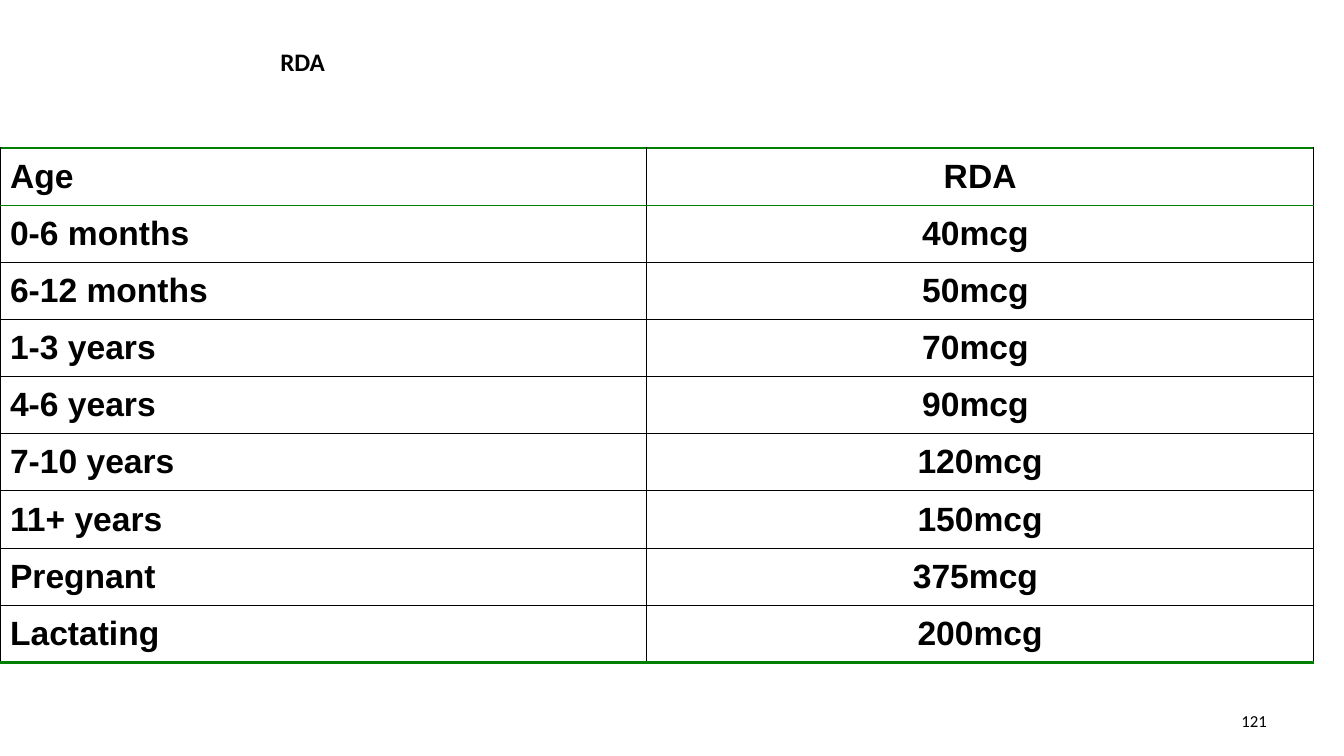
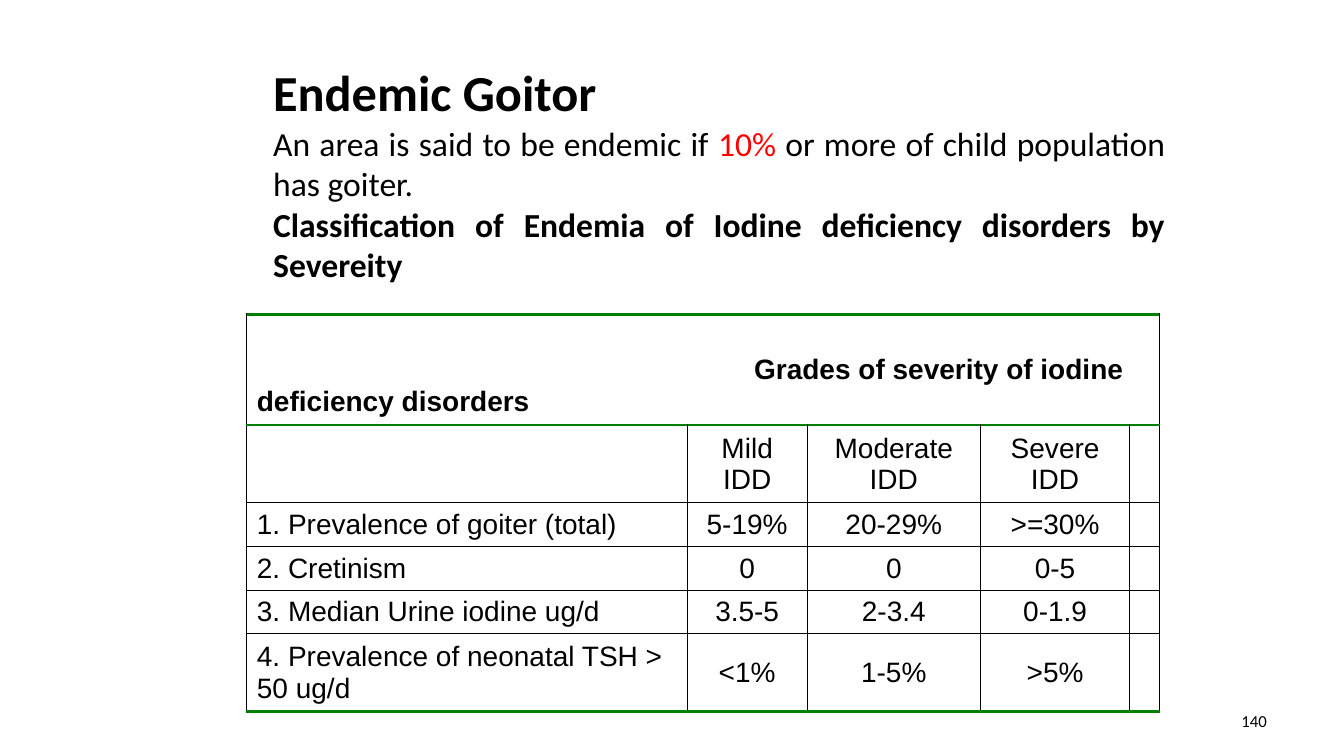
from dataclasses import dataclass

from lxml import etree
from pptx import Presentation
from pptx import util as u
from pptx.dml.color import RGBColor
from pptx.enum import text as t
from pptx.oxml import ns

BLACK, GREEN, RED = "000000", "008000", "FF0000"
HEADING_FONT, TABLE_FONT = "Calibri", "Arial"
LEFT, CENTER, RIGHT, JUSTIFY = (
    t.PP_ALIGN.LEFT, t.PP_ALIGN.CENTER, t.PP_ALIGN.RIGHT, t.PP_ALIGN.JUSTIFY)
TOP, MIDDLE = t.MSO_ANCHOR.TOP, t.MSO_ANCHOR.MIDDLE


@dataclass(frozen=True)
class Box:
    left: float
    top: float
    width: float
    height: float


@dataclass(frozen=True)
class Grid:
    left: float
    top: float
    columns: list[float]
    heights: list[float]
    rows: list[list[str]]
    size: float
    bold_body: bool = False


RDA_GRID = Grid(
    0, 3.73, [16.3, 16.8], [1.44] * 9,
    [
        ["Age", "RDA"],
        ["0-6 months", "40mcg "],
        ["6-12 months", "50mcg "],
        ["1-3 years", "70mcg "],
        ["4-6 years", "90mcg "],
        ["7-10 years", "120mcg"],
        ["11+ years", "150mcg"],
        ["Pregnant", "375mcg "],
        ["Lactating", "200mcg"],
    ],
    24, bold_body=True,
)

SEVERITY_GRID = Grid(
    6.22, 7.92, [11.1, 3.02, 4.37, 3.76, 0.76], [2.79, 1.96, 1.1, 1.1, 1.1, 1.96],
    [
        ["Grades of severity of iodine deficiency disorders"],
        ["", "Mild IDD", "Moderate IDD", "Severe IDD"],
        ["1. Prevalence of goiter (total)", "5-19%", "20-29%", ">=30%"],
        ["2. Cretinism", "0", "0", "0-5"],
        ["3. Median Urine iodine ug/d", "3.5-5", "2-3.4", "0-1.9"],
        ["4. Prevalence of neonatal TSH > 50 ug/d", "<1%", "1-5%", ">5%"],
    ],
    20,
)


def rgb(value: str) -> RGBColor:
    return RGBColor.from_string(value)


def write(paragraph, content: str, *, size: float, font: str = HEADING_FONT,
          color: str = BLACK, bold: bool = False, align=LEFT) -> None:
    paragraph.alignment = align
    run = paragraph.add_run()
    run.text = content
    run.font.name = font
    run.font.size = u.Pt(size)
    run.font.bold = bold
    run.font.color.rgb = rgb(color)


def set_indent(paragraph, first_line: float) -> None:
    properties = paragraph._p.get_or_add_pPr()
    properties.set("marL", "0")
    properties.set("indent", str(u.Cm(first_line)))


def place(shape, box: Box, anchor=MIDDLE, inset: float = 0.13):
    shape.left, shape.top = u.Cm(box.left), u.Cm(box.top)
    shape.width, shape.height = u.Cm(box.width), u.Cm(box.height)
    frame = shape.text_frame
    frame.word_wrap = True
    frame.auto_size = t.MSO_AUTO_SIZE.NONE
    frame.vertical_anchor = anchor
    frame.margin_top = frame.margin_bottom = u.Cm(inset)
    return frame


def add_slide(presentation, layout: int, number: str, title: str, box: Box,
              size: float, align=LEFT):
    slide = presentation.slides.add_slide(presentation.slide_layouts[layout])
    frame = place(slide.shapes.title, box, TOP)
    write(frame.paragraphs[0], title, size=size, bold=True, align=align)
    footer = slide.shapes.add_textbox(0, 0, 0, 0)
    frame = place(footer, Box(24.28, 17.65, 7.9, 1.02))
    write(frame.paragraphs[0], number, size=12, align=RIGHT)
    return slide


def set_border(cell, side: str, color: str, width: float) -> None:
    line = etree.SubElement(cell._tc.get_or_add_tcPr(), ns.qn(f"a:ln{side}"),
                            w=str(u.Pt(width)))
    fill = etree.SubElement(line, ns.qn("a:solidFill"))
    etree.SubElement(fill, ns.qn("a:srgbClr"), val=color)


def format_cell(cell, row: int, last_row: int) -> None:
    thin, header, outer = (BLACK, 0.75), (GREEN, 1), (GREEN, 2)
    set_border(cell, "L", *thin)
    set_border(cell, "R", *thin)
    set_border(cell, "T", *{0: outer, 1: header}.get(row, thin))
    set_border(cell, "B", *{0: header, last_row: outer}.get(row, thin))
    cell.fill.background()
    cell.vertical_anchor = MIDDLE


def add_grid(slide, grid: Grid):
    table = slide.shapes.add_table(
        len(grid.heights), len(grid.columns), u.Cm(grid.left), u.Cm(grid.top),
        u.Cm(sum(grid.columns)), u.Cm(sum(grid.heights))).table
    table.first_row = table.horz_banding = False
    for column, width in zip(table.columns, grid.columns):
        column.width = u.Cm(width)
    for row, height in zip(table.rows, grid.heights):
        row.height = u.Cm(height)
    for row in range(len(grid.heights)):
        for column in range(len(grid.columns)):
            format_cell(table.cell(row, column), row, len(grid.heights) - 1)
        for column, content in enumerate(grid.rows[row]):
            if content:
                write(table.cell(row, column).text_frame.paragraphs[0], content,
                      size=grid.size, font=TABLE_FONT,
                      bold=row == 0 or grid.bold_body,
                      align=CENTER if column else LEFT)
    return table


def build_rda(presentation) -> None:
    slide = add_slide(presentation, 5, "121", "RDA", Box(6.81, 1.04, 13.31, 1.02), 18)
    add_grid(slide, RDA_GRID)


def build_goitre(presentation) -> None:
    slide = add_slide(presentation, 1, "140", "Endemic Goitor",
                      Box(6.63, 1.4, 22.99, 1.8), 36, JUSTIFY)
    frame = place(slide.placeholders[1], Box(6.63, 3.1, 22.99, 4.2), TOP, inset=0)
    definition, classification = frame.paragraphs[0], frame.add_paragraph()
    for paragraph in (definition, classification):
        set_indent(paragraph, 0)
        paragraph.space_before = u.Pt(0)
        etree.SubElement(paragraph._p.get_or_add_pPr(), ns.qn("a:buNone"))
    for content, color in (("An area is said to be endemic if ", BLACK), ("10%", RED),
                           (" or more of child population has goiter. ", BLACK)):
        write(definition, content, size=24, color=color, align=JUSTIFY)
    write(classification,
          "Classification of Endemia of Iodine deficiency disorders by Severeity",
          size=24, bold=True, align=JUSTIFY)

    table = add_grid(slide, SEVERITY_GRID)
    header = table.cell(0, 0)
    header.merge(table.cell(0, len(SEVERITY_GRID.columns) - 1))
    header.margin_top = u.Cm(0.94)
    set_indent(header.text_frame.paragraphs[0], 12.53)


def main() -> None:
    presentation = Presentation()
    presentation.slide_width, presentation.slide_height = u.Cm(33.87), u.Cm(19.05)
    build_rda(presentation)
    build_goitre(presentation)
    presentation.save("out.pptx")


if __name__ == "__main__":
    main()
